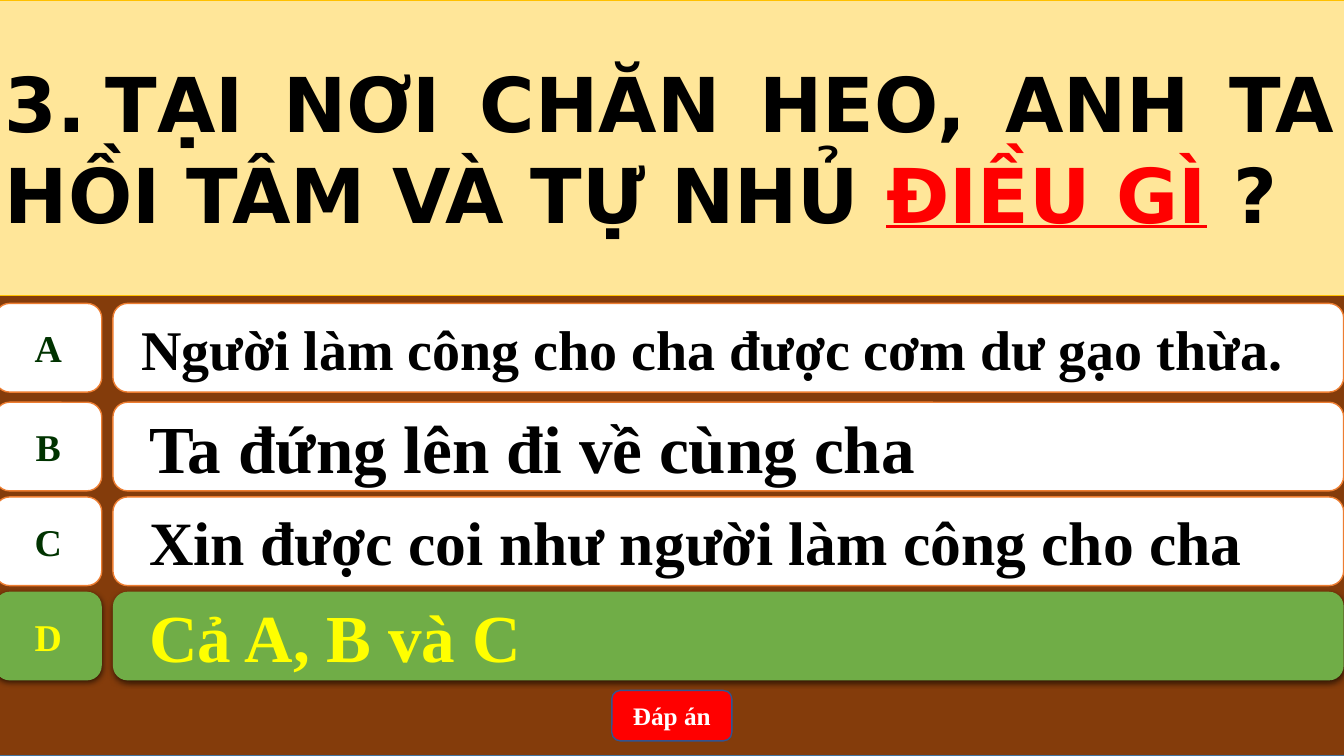
"""Build a quiz slide with one question, four answers and a button."""
from dataclasses import dataclass

from lxml import etree
from pptx import Presentation
from pptx import util as u
from pptx.dml.color import RGBColor
from pptx.enum import shapes, text
from pptx.oxml import ns

WIDE, HIGH = u.Inches(13.333), u.Inches(7.5)
COL, ROW = WIDE / 40, HIGH / 30
LEFT, FULL = -0.15, 40.17

BROWN = RGBColor(0x84, 0x3C, 0x0B)
BLUE = RGBColor(0x43, 0x73, 0x9E)
NAVY = RGBColor(0x32, 0x54, 0x91)
CREAM = RGBColor(0xFF, 0xE6, 0x99)
GOLD = RGBColor(0xFF, 0xC0, 0x00)
ORANGE = RGBColor(0xED, 0x7D, 0x31)
GREEN = RGBColor(0x70, 0xAD, 0x47)
DARK = RGBColor(0x00, 0x33, 0x00)
WHITE = RGBColor(0xFF, 0xFF, 0xFF)
BLACK = RGBColor(0x00, 0x00, 0x00)
RED = RGBColor(0xFF, 0x00, 0x00)
YELLOW = RGBColor(0xFF, 0xFF, 0x00)

KIND = shapes.MSO_SHAPE
ALIGN = text.PP_ALIGN
SERIF, SANS = "Times New Roman", "DejaVu Sans"


@dataclass
class Answer:
    """One answer row; top is in grid rows, margin and indent in inches."""
    mark: str
    words: str
    top: float
    size: int
    margin: float = 0.5
    indent: float = -0.28
    right: bool = False


ANSWERS = [
    Answer("A", "Người làm công cho cha được cơm dư gạo thừa.", 12.04, 40, 0.14, 0),
    Answer("B", "Ta đứng lên đi về cùng cha", 15.96, 48),
    Answer("C", "Xin được coi như người làm công cho cha", 19.72, 44),
    Answer("D", "Cả A, B và C", 23.48, 48, right=True),
]


def box(tree, kind, left: float, top: float, wide: float, high: float,
        fill: RGBColor, line: RGBColor | None = None, width: float = 1):
    """Add a filled shape placed in grid columns and rows."""
    shape = tree.add_shape(kind, round(left * COL), round(top * ROW),
                           round(wide * COL), round(high * ROW))
    shape.shadow.inherit = False
    shape.fill.solid()
    shape.fill.fore_color.rgb = fill
    if line is None:
        shape.line.fill.background()
    else:
        shape.line.color.rgb = line
        shape.line.width = u.Pt(width)
    shape.text_frame.vertical_anchor = text.MSO_ANCHOR.MIDDLE
    return shape


def write(shape, words: str, *, size: float, color: RGBColor, font: str = SERIF,
          align=ALIGN.LEFT, under: bool = False, wrap: bool = True,
          margin: float = 0, indent: float = 0) -> None:
    """Append a bold run to the first paragraph of a shape."""
    frame = shape.text_frame
    frame.word_wrap = wrap
    para = frame.paragraphs[0]
    para.alignment = align
    props = para._p.get_or_add_pPr()
    props.set("marL", str(u.Inches(margin)))
    props.set("indent", str(u.Inches(indent)))
    run = para.add_run()
    run.text = words
    run.font.name = font
    run.font.size = u.Pt(size)
    run.font.bold = True
    run.font.underline = under
    run.font.color.rgb = color


def shade(shape) -> None:
    """Give a shape a soft shadow below it."""
    effects = shape._element.spPr.find(ns.qn("a:effectLst"))
    outer = etree.SubElement(effects, ns.qn("a:outerShdw"), blurRad=str(u.Pt(4.5)),
                             dist=str(u.Pt(1.5)), dir="5400000", rotWithShape="0")
    tone = etree.SubElement(outer, ns.qn("a:srgbClr"), val="000000")
    etree.SubElement(tone, ns.qn("a:alpha"), val="63000")


def draw(tree, item: Answer) -> None:
    """Draw the letter and the wording of one answer."""
    fill, line = (GREEN, None) if item.right else (WHITE, ORANGE)
    bar = box(tree, KIND.ROUNDED_RECTANGLE, 3.36, item.top, 36.63, 3.52, fill, line)
    write(bar, item.words, size=item.size, color=YELLOW if item.right else BLACK,
          margin=item.margin, indent=item.indent)
    tag = box(tree, KIND.FLOWCHART_ALTERNATE_PROCESS, LEFT, item.top, 3.18, 3.52,
              fill, line)
    write(tag, item.mark, size=27, color=YELLOW if item.right else DARK,
          align=ALIGN.CENTER, wrap=False)
    if item.right:
        shade(bar)
        shade(tag)


def main() -> None:
    """Build and save the slide."""
    deck = Presentation()
    deck.slide_width, deck.slide_height = WIDE, HIGH
    tree = deck.slides.add_slide(deck.slide_layouts[6]).shapes

    box(tree, KIND.RECTANGLE, LEFT, 0, FULL, 30, BROWN, BLUE)
    title = box(tree, KIND.RECTANGLE, LEFT, 0, FULL, 11.72, CREAM, GOLD, 0.5)
    for words, color, under in [
        ("3.\tTẠI NƠI CHĂN HEO, ANH TA HỒI TÂM VÀ TỰ NHỦ ", BLACK, False),
        ("ĐIỀU GÌ", RED, True),
        (" ?", BLACK, False),
    ]:
        write(title, words, size=54, color=color, font=SANS,
              align=ALIGN.JUSTIFY, under=under)

    for item in ANSWERS:
        draw(tree, item)

    key = box(tree, KIND.ROUNDED_RECTANGLE, 18.21, 27.4, 3.57, 2, RED, NAVY)
    write(key, "Đáp án", size=18, color=WHITE, align=ALIGN.CENTER)
    deck.save("out.pptx")


if __name__ == "__main__":
    main()
